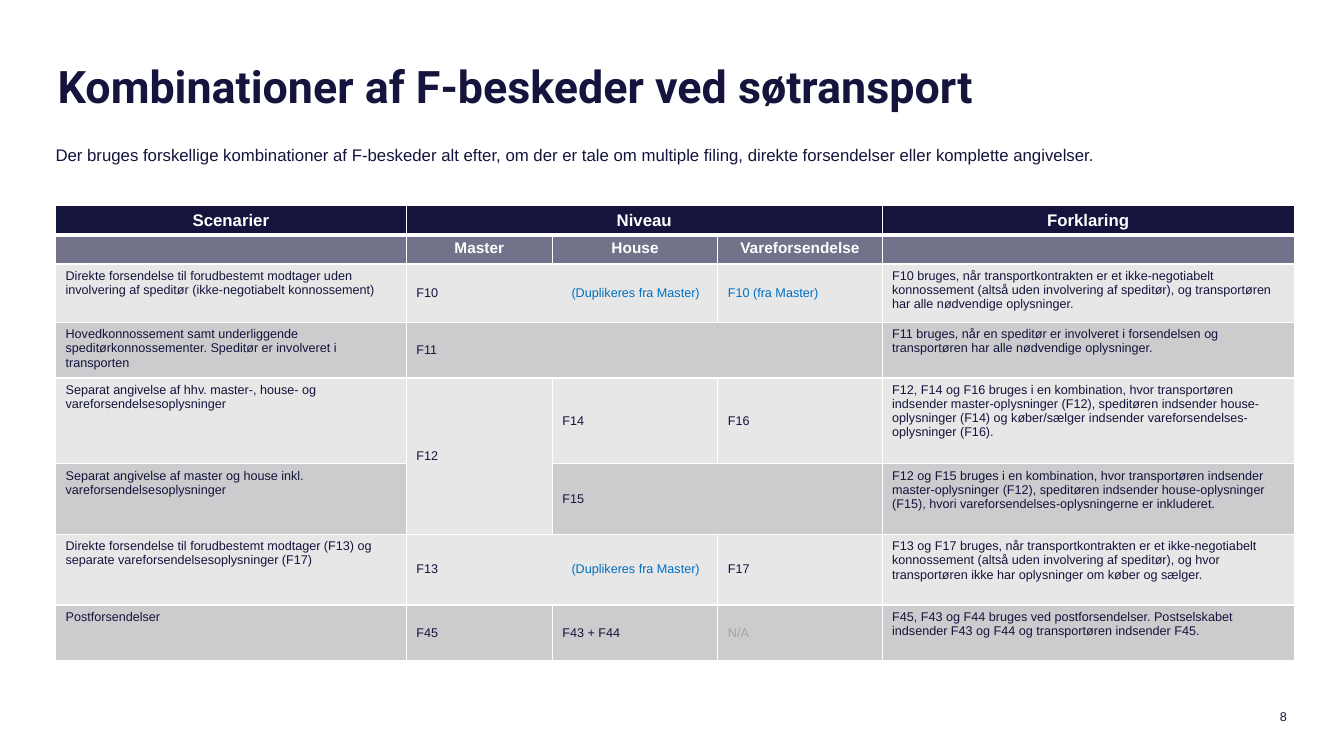
"""Build the slide on F-message combinations in sea transport."""
from dataclasses import dataclass

from lxml import etree
from pptx import Presentation
from pptx.dml.color import RGBColor
from pptx.enum.text import MSO_ANCHOR, MSO_AUTO_SIZE, PP_ALIGN
from pptx.oxml.ns import qn
from pptx.util import Cm, Pt

NAVY = RGBColor(0x14, 0x14, 0x3C)
SLATE = RGBColor(0x72, 0x72, 0x8A)
LIGHT = RGBColor(0xE7, 0xE7, 0xE8)
DARK = RGBColor(0xCC, 0xCC, 0xCE)
WHITE = RGBColor(0xFF, 0xFF, 0xFF)
BLUE = RGBColor(0x00, 0x70, 0xC0)
GREY = RGBColor(0xA6, 0xA6, 0xA6)
TOP, MID, BASE = MSO_ANCHOR.TOP, MSO_ANCHOR.MIDDLE, MSO_ANCHOR.BOTTOM
LEFT, MIDST, RIGHT = PP_ALIGN.LEFT, PP_ALIGN.CENTER, PP_ALIGN.RIGHT
FIXED = MSO_AUTO_SIZE.NONE

HEAD = {"name": "Arial", "size": Pt(12), "bold": True}
SUB = {"name": "Arial", "size": Pt(11), "bold": True}
BODY = {"name": "Arial", "size": Pt(9), "bold": False}
LEAD = {"name": "Arial", "size": Pt(12), "bold": False}
TITLE = {"name": "Roboto", "size": Pt(32), "bold": True}

WIDTHS = (8.84, 3.68, 4.17, 4.14, 10.39)
STOP = Cm(3.91)
TWICE = "(Duplikeres fra Master)"


@dataclass(frozen=True)
class Bit:
    words: str
    tone: RGBColor = NAVY


@dataclass(frozen=True)
class Entry:
    col: int
    bits: tuple[Bit, ...]
    wide: int = 1
    tall: int = 1


@dataclass(frozen=True)
class Row:
    high: float
    fill: RGBColor
    style: dict
    cells: tuple[Entry, ...]


def entry(col: int, words: str, tone: RGBColor = NAVY, wide: int = 1, tall: int = 1) -> Entry:
    """Return a cell entry with one run."""
    return Entry(col, (Bit(words, tone),), wide, tall)


def twin(code: str) -> Entry:
    """Return a master entry that is duplicated at house level."""
    return Entry(1, (Bit(code + "\t"), Bit(TWICE, BLUE)), 2)


def case(high: float, fill: RGBColor, name: str, note: str, *cells: Entry) -> Row:
    """Return a body row with its scenario, codes and explanation."""
    return Row(high, fill, BODY, (entry(0, name), *cells, entry(4, note)))


ROWS = (
    Row(0.74, NAVY, HEAD, (entry(0, "Scenarier", WHITE), entry(1, "Niveau", WHITE, 3),
                           entry(4, "Forklaring", WHITE))),
    Row(0.71, SLATE, SUB, (entry(1, "Master", WHITE), entry(2, "House", WHITE),
                           entry(3, "Vareforsendelse", WHITE))),
    case(1.47, LIGHT,
         "Direkte forsendelse til forudbestemt modtager uden involvering af speditør "
         "(ikke-negotiabelt konnossement)",
         "F10 bruges, når transportkontrakten er et ikke-negotiabelt konnossement (altså uden "
         "involvering af speditør), og transportøren har alle nødvendige oplysninger.",
         twin("F10"), entry(3, "F10 (fra Master)", BLUE)),
    case(1.4, DARK,
         "Hovedkonnossement samt underliggende speditørkonnossementer. Speditør er involveret "
         "i transporten",
         "F11 bruges, når en speditør er involveret i forsendelsen og transportøren har alle "
         "nødvendige oplysninger.",
         entry(1, "F11", wide=3)),
    case(2.16, LIGHT,
         "Separat angivelse af hhv. master-, house- og vareforsendelsesoplysninger",
         "F12, F14 og F16 bruges i en kombination, hvor transportøren indsender "
         "master-oplysninger (F12), speditøren indsender house-oplysninger (F14) og "
         "køber/sælger indsender vareforsendelses-oplysninger (F16).",
         entry(1, "F12", tall=2), entry(2, "F14"), entry(3, "F16")),
    case(1.78, DARK,
         "Separat angivelse af master og house inkl. vareforsendelsesoplysninger",
         "F12 og F15 bruges i en kombination, hvor transportøren indsender master-oplysninger "
         "(F12), speditøren indsender house-oplysninger (F15), hvori "
         "vareforsendelses-oplysningerne er inkluderet.",
         entry(2, "F15", wide=2)),
    case(1.78, LIGHT,
         "Direkte forsendelse til forudbestemt modtager (F13) og separate "
         "vareforsendelsesoplysninger (F17)",
         "F13 og F17 bruges, når transportkontrakten er et ikke-negotiabelt konnossement (altså "
         "uden involvering af speditør), og hvor transportøren ikke har oplysninger om køber "
         "og sælger.",
         twin("F13"), entry(3, "F17")),
    case(1.4, DARK, "Postforsendelser",
         "F45, F43 og F44 bruges ved postforsendelser. Postselskabet indsender F43 og F44 og "
         "transportøren indsender F45.",
         entry(1, "F45"), entry(2, "F43 + F44"), entry(3, "N/A", GREY)),
)


def put(para, bits: tuple[Bit, ...], style: dict) -> None:
    """Add formatted runs to a paragraph."""
    for bit in bits:
        run = para.add_run()
        run.text = bit.words
        for key, value in style.items():
            setattr(run.font, key, value)
        run.font.color.rgb = bit.tone


def block(shape, words: str, style: dict, side=LEFT, anchor=TOP, space: float = 1.0) -> None:
    """Fill a text shape that has no insets."""
    frame = shape.text_frame
    form = {"margin_left": 0, "margin_right": 0, "margin_top": 0, "margin_bottom": 0,
            "word_wrap": True, "auto_size": FIXED, "vertical_anchor": anchor}
    for key, value in form.items():
        setattr(frame, key, value)
    para = frame.paragraphs[0]
    para.alignment = side
    para.line_spacing = space
    put(para, (Bit(words),), style)


def edge(cell, thick: dict[str, float]) -> None:
    """Draw white borders on a cell."""
    props = cell._tc.get_or_add_tcPr()
    for side in "LRTB":
        line = etree.SubElement(props, qn("a:ln" + side), w=str(Pt(thick.get(side, 1))))
        fill = etree.SubElement(line, qn("a:solidFill"))
        etree.SubElement(fill, qn("a:srgbClr"), val=str(WHITE))


def base(cell, row: Row, level: int) -> None:
    """Give a cell its borders, fill and base text size."""
    edge(cell, {0: {"B": 3}, 1: {"T": 3}}.get(level, {}))
    cell.fill.solid()
    cell.fill.fore_color.rgb = row.fill
    end = cell.text_frame.paragraphs[0]._p.get_or_add_endParaRPr()
    end.set("sz", str(int(row.style["size"].pt * 100)))


def grid(slide) -> None:
    """Add the table of scenarios."""
    high = sum(row.high for row in ROWS)
    frame = slide.shapes.add_table(len(ROWS), len(WIDTHS), Cm(1.4), Cm(5.18),
                                   Cm(sum(WIDTHS)), Cm(high))
    table = frame.table
    for col, width in zip(table.columns, WIDTHS):
        col.width = Cm(width)
    for level, row in enumerate(ROWS):
        table.rows[level].height = Cm(row.high)
        for col in range(len(WIDTHS)):
            base(table.cell(level, col), row, level)
    for level, row in enumerate(ROWS):
        for item in row.cells:
            cell = table.cell(level, item.col)
            if item.wide * item.tall > 1:
                cell.merge(table.cell(level + item.tall - 1, item.col + item.wide - 1))
            para = cell.text_frame.paragraphs[0]
            if len(item.bits) > 1:
                tabs = etree.SubElement(para._p.get_or_add_pPr(), qn("a:tabLst"))
                etree.SubElement(tabs, qn("a:tab"), pos=str(STOP), algn="l")
            para.alignment = LEFT if row.style is BODY else MIDST
            code = row.style is BODY and 0 < item.col < 4
            cell.vertical_anchor = MID if level == 0 or code else TOP
            put(para, item.bits, row.style)


def main() -> None:
    """Build and save the slide."""
    deck = Presentation()
    deck.slide_width, deck.slide_height = Cm(33.87), Cm(19.05)
    slide = deck.slides.add_slide(deck.slide_layouts[5])
    title = slide.shapes.title
    spot = {"left": Cm(1.45), "top": Cm(1.65), "width": Cm(30.99), "height": Cm(1.45)}
    for key, value in spot.items():
        setattr(title, key, value)
    block(title, "Kombinationer af F-beskeder ved søtransport", TITLE, space=0.89)
    lead = slide.shapes.add_textbox(Cm(1.4), Cm(3.58), Cm(28), Cm(1.09))
    block(lead, "Der bruges forskellige kombinationer af F-beskeder alt efter, om der er tale om "
          "multiple filing, direkte forsendelser eller komplette angivelser.", LEAD, space=1.11)
    grid(slide)
    page = slide.shapes.add_textbox(Cm(28.04), Cm(17.86), Cm(4.39), Cm(0.38))
    block(page, "8", BODY, RIGHT, BASE)
    deck.save("out.pptx")


if __name__ == "__main__":
    main()
